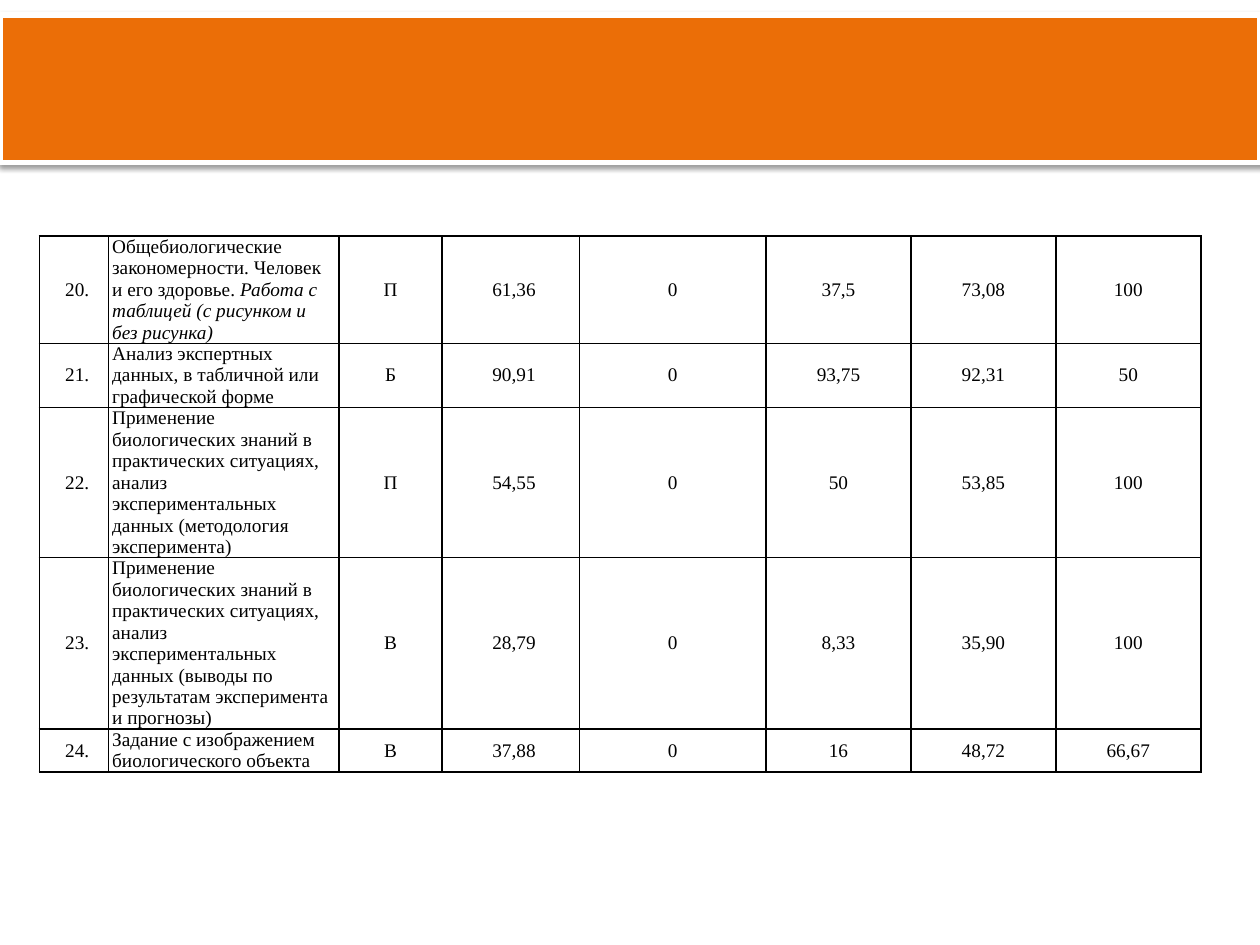
from lxml import etree
from pptx import Presentation
from pptx.dml.color import RGBColor
from pptx.enum.shapes import MSO_SHAPE
from pptx.enum.text import MSO_ANCHOR, PP_ALIGN
from pptx.oxml import parse_xml
from pptx.oxml.ns import nsdecls, qn
from pptx.util import Pt

RECT = MSO_SHAPE.RECTANGLE
MIDDLE = MSO_ANCHOR.MIDDLE
LEFT, CENTER = PP_ALIGN.LEFT, PP_ALIGN.CENTER

ORANGE = RGBColor(0xEB, 0x6E, 0x07)
WHITE = RGBColor(0xFF, 0xFF, 0xFF)
BLACK = RGBColor(0x00, 0x00, 0x00)

WIDTHS = [39.6, 131.6, 59, 78.5, 106.6, 82.8, 82.8, 82.8]
HEIGHTS = [61.2, 36.7, 85.7, 98, 24.5]
INDENTS = {0: 3.6, 2: -5.8, 3: 3.6}
TOPIC = 1
SKILL = "Применение биологических знаний в практических ситуациях, анализ экспериментальных данных "

# A topic is a tuple of runs; the second run is italic.
ROWS = [
    ("20.", ("Общебиологические закономерности. Человек и его здоровье. ",
             "Работа с таблицей (с рисунком и без рисунка)"),
     "П", "61,36", "0", "37,5", "73,08", "100"),
    ("21.", ("Анализ экспертных данных, в табличной или графической форме",),
     "Б", "90,91", "0", "93,75", "92,31", "50"),
    ("22.", (SKILL + "(методология эксперимента)",),
     "П", "54,55", "0", "50", "53,85", "100"),
    ("23.", (SKILL + "(выводы по результатам эксперимента и прогнозы)",),
     "В", "28,79", "0", "8,33", "35,90", "100"),
    ("24.", ("Задание с изображением биологического объекта",),
     "В", "37,88", "0", "16", "48,72", "66,67"),
]


class Page:
    font = "Times New Roman"
    size = Pt(11)

    def __init__(self, slide):
        self.slide = slide

    def band(self, left, top, width, height):
        shape = self.slide.shapes.add_shape(
            RECT, Pt(left), Pt(top), Pt(width), Pt(height))
        shape.fill.solid()
        shape.fill.fore_color.rgb = ORANGE
        shape.line.color.rgb = WHITE
        shape.line.width = Pt(3)
        shape.shadow.inherit = False
        effects = shape._element.spPr.find(qn("a:effectLst"))
        effects.append(parse_xml(
            f'<a:outerShdw {nsdecls("a")} blurRad="{Pt(3.1)}" dist="{Pt(1.6)}" '
            'dir="5400000" rotWithShape="0"><a:srgbClr val="000000">'
            '<a:alpha val="38000"/></a:srgbClr></a:outerShdw>'))

    def table(self, left, top, widths, heights, rows):
        frame = self.slide.shapes.add_table(
            len(rows), len(widths), Pt(left), Pt(top),
            Pt(sum(widths)), Pt(sum(heights)))
        table = frame.table
        table.first_row = table.horz_banding = False
        for col, width in zip(table.columns, widths):
            col.width = Pt(width)
        for row, height, values in zip(table.rows, heights, rows):
            row.height = Pt(height)
            for index, value in enumerate(values):
                self.cell(row.cells[index], index, value)

    def cell(self, cell, index, value):
        cell.vertical_anchor = MIDDLE
        cell.margin_left = cell.margin_right = Pt(2)
        cell.margin_top = cell.margin_bottom = 0
        self.border(cell)
        cell.fill.background()
        para = cell.text_frame.paragraphs[0]
        para.alignment = LEFT if index == TOPIC else CENTER
        if index in INDENTS:
            props = para._p.get_or_add_pPr()
            props.set("marL", "0")
            props.set("indent", str(Pt(INDENTS[index])))
        para.font.name = self.font
        para.font.size = self.size
        para.font.color.rgb = BLACK
        parts = value if index == TOPIC else (value,)
        for order, text in enumerate(parts):
            run = para.add_run()
            run.text = text
            if order:
                run.font.italic = True

    def border(self, cell):
        props = cell._tc.get_or_add_tcPr()
        for side in ("lnL", "lnR", "lnT", "lnB"):
            line = etree.SubElement(props, qn("a:" + side), w=str(Pt(1)))
            fill = etree.SubElement(line, qn("a:solidFill"))
            etree.SubElement(fill, qn("a:srgbClr"), val=str(BLACK))


def main():
    deck = Presentation()
    deck.slide_width, deck.slide_height = Pt(720), Pt(540)
    page = Page(deck.slides.add_slide(deck.slide_layouts[6]))
    page.band(0, 8.5, 720, 84.4)
    page.table(22.5, 134.9, WIDTHS, HEIGHTS, ROWS)
    deck.save("out.pptx")


if __name__ == "__main__":
    main()
